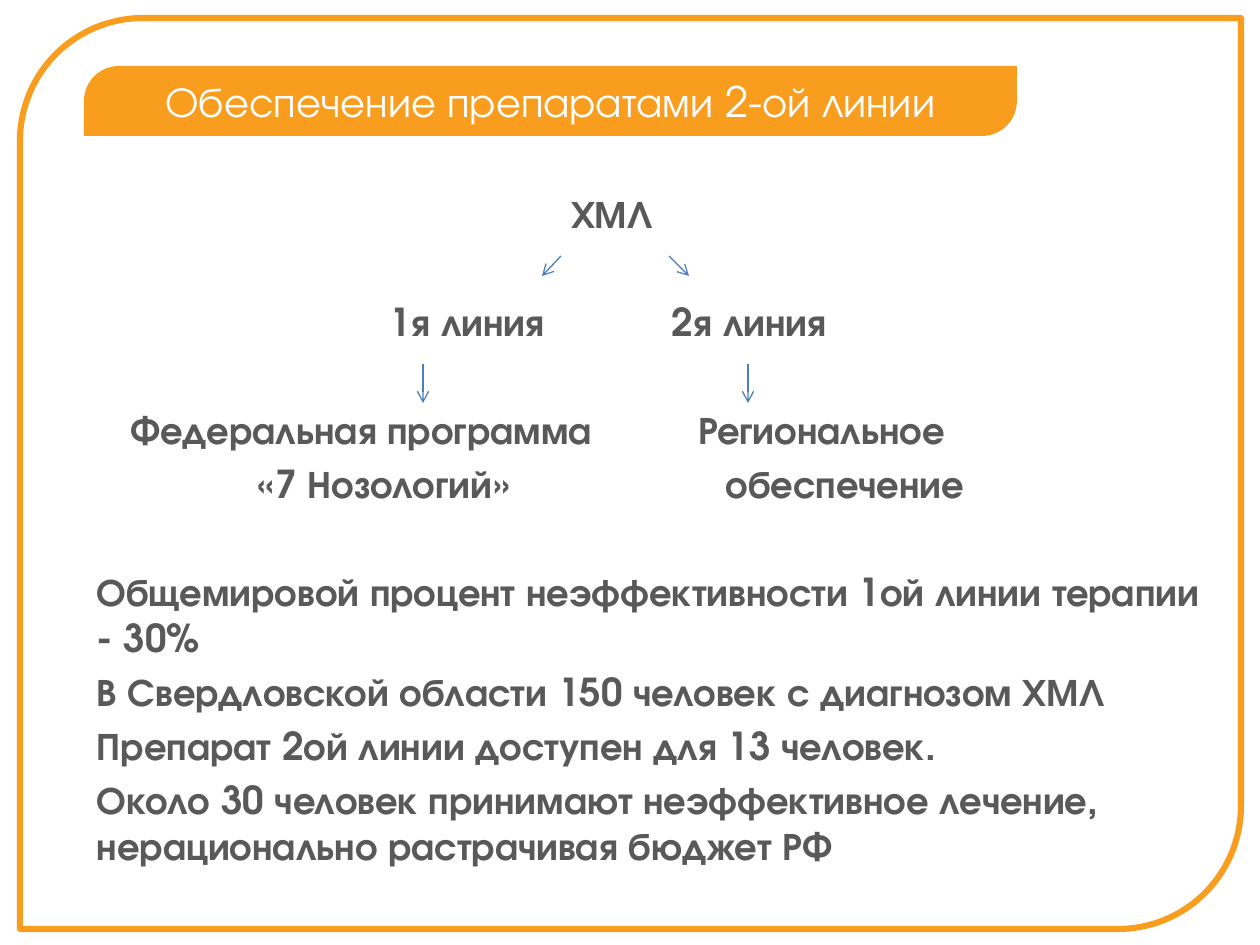
import dataclasses
import pptx
import pptx.dml.color
import pptx.enum.shapes
import pptx.enum.text
import pptx.oxml
import pptx.oxml.ns
import pptx.util

SCALE = 914400 / 126
ROW = 54
SLACK = 24


@dataclasses.dataclass(frozen=True)
class Theme:
    """Colours, font and sizes of the slide."""
    accent: str = "F99D1E"
    paper: str = "FFFFFF"
    ink: str = "595959"
    arrow: str = "4B7EBC"
    font: str = "TeX Gyre Adventor"
    title_size: int = 24
    body_size: int = 22
    frame_line: float = 3.5
    arrow_line: float = 0.75


THEME = Theme()

LABELS = [
    (487, 0, 81, "ХМЛ"),
    (306, 2, 150, "1я линия"),
    (588, 2, 154, "2я линия"),
    (46, 4, 461, "Федеральная программа"),
    (614, 4, 247, "Региональное"),
    (174, 5, 252, "«7 Нозологий»"),
    (642, 5, 237, "обеспечение"),
]
ARROWS = [
    (477, 66, 458, 86),
    (585, 66, 605, 86),
    (339, 174, 339, 213),
    (664, 174, 664, 213),
]
FACTS = [
    "Общемировой процент неэффективности 1ой линии терапии - 30%",
    "В Свердловской области 150 человек с диагнозом ХМЛ",
    "Препарат 2ой линии доступен для 13 человек.",
    "Около 30 человек принимают неэффективное лечение, "
    "нерационально растрачивая бюджет РФ",
]


def px(*lengths):
    """Turn pixel lengths into EMU."""
    return [pptx.util.Emu(round(n * SCALE)) for n in lengths]


def rgb(value):
    """Turn a hex string into a colour."""
    return pptx.dml.color.RGBColor.from_string(value)


def add_run(p, text, size, color, bold=False):
    """Append one styled run to a paragraph."""
    r = p.add_run()
    r.text = text
    r.font.name = THEME.font
    r.font.size = pptx.util.Pt(size)
    r.font.bold = bold
    r.font.color.rgb = rgb(color)


def add_panel(s, box, corner, fill):
    """Add a rectangle with two opposite corners rounded."""
    kind = pptx.enum.shapes.MSO_SHAPE.ROUND_2_DIAG_RECTANGLE
    sp = s.shapes.add_shape(kind, *px(*box))
    sp.adjustments[0] = corner
    sp.adjustments[1] = 0
    sp.shadow.inherit = False
    sp.fill.solid()
    sp.fill.fore_color.rgb = rgb(fill)
    return sp


def add_text(s, box, lines):
    """Add a text box without margins, one paragraph per line."""
    tf = s.shapes.add_textbox(*px(*box)).text_frame
    tf.word_wrap = True
    tf.margin_left = tf.margin_right = tf.margin_top = tf.margin_bottom = 0
    for i, line in enumerate(lines):
        p = tf.add_paragraph() if i else tf.paragraphs[0]
        p.space_before = pptx.util.Pt(THEME.body_size * 0.2 if i else 0)
        add_run(p, line, THEME.body_size, THEME.ink, bold=True)


def add_arrow(s, ends):
    """Add a thin line with an open arrowhead at its end."""
    kind = pptx.enum.shapes.MSO_CONNECTOR.STRAIGHT
    sp = s.shapes.add_connector(kind, *px(*ends))
    sp.line.color.rgb = rgb(THEME.arrow)
    sp.line.width = pptx.util.Pt(THEME.arrow_line)
    ln = sp.line._get_or_add_ln()
    tail = pptx.oxml.ns.qn("a:tailEnd")
    ln.append(ln.makeelement(tail, {"type": "arrow"}))
    effects = pptx.oxml.ns.qn("a:effectLst")
    ln.addnext(ln.makeelement(effects, {}))


def add_frame(s, box):
    """Draw the outlined frame around the slide."""
    sp = add_panel(s, box, 0.135, THEME.paper)
    sp.line.color.rgb = rgb(THEME.accent)
    sp.line.width = pptx.util.Pt(THEME.frame_line)


def add_title(s, box):
    """Draw the title banner."""
    sp = add_panel(s, box, 0.5, THEME.accent)
    sp.line.fill.background()
    tf = sp.text_frame
    tf.word_wrap = True
    tf.vertical_anchor = pptx.enum.text.MSO_ANCHOR.MIDDLE
    p = tf.paragraphs[0]
    p.alignment = pptx.enum.text.PP_ALIGN.CENTER
    add_run(p, "Обеспечение препаратами 2-ой линии",
            THEME.title_size, THEME.paper)


def add_scheme(s, box):
    """Draw the therapy tree: labels on rows, joined by arrows."""
    left, top = box[:2]
    for x, row, width, text in LABELS:
        add_text(s, (left + x, top + row * ROW, width + SLACK, 46), [text])
    for x1, y1, x2, y2 in ARROWS:
        add_arrow(s, (left + x1, top + y1, left + x2, top + y2))


def add_facts(s, box):
    """Write the statements below the tree."""
    add_text(s, box, FACTS)


def main():
    """Build and save the slide."""
    prs = pptx.Presentation()
    prs.slide_width, prs.slide_height = px(1260, 945)
    s = prs.slides.add_slide(prs.slide_layouts[6])
    add_frame(s, (20, 18, 1221, 911))
    add_title(s, (84, 66, 933, 70))
    add_scheme(s, (84, 190, 1134, 6 * ROW))
    add_facts(s, (97, 190 + 7 * ROW, 1110, 290))
    prs.save("out.pptx")


if __name__ == "__main__":
    main()
